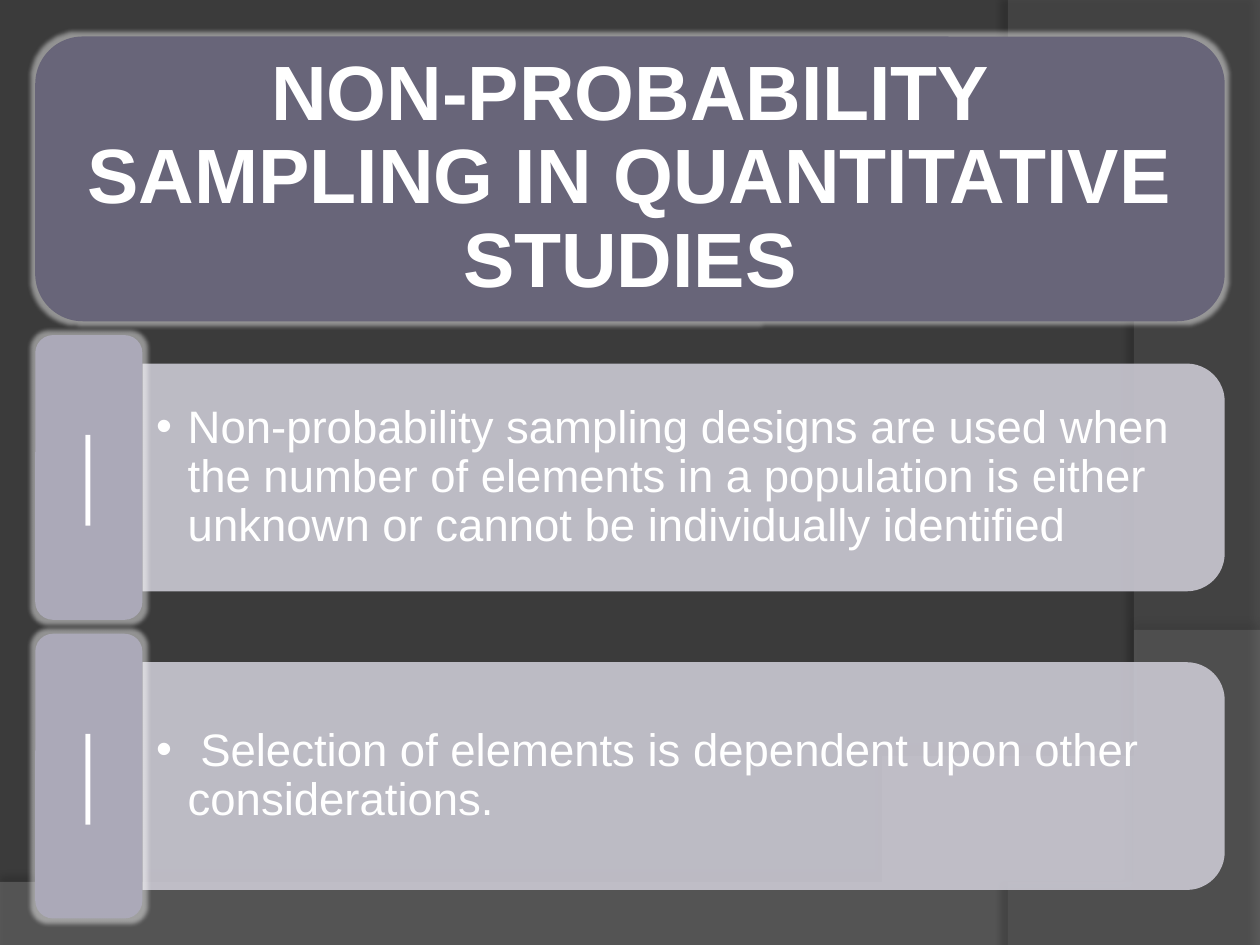
from dataclasses import dataclass

from lxml import etree
from pptx import Presentation
from pptx.dml.color import RGBColor
from pptx.enum.shapes import MSO_SHAPE
from pptx.enum.text import MSO_ANCHOR, MSO_AUTO_SIZE, PP_ALIGN
from pptx.oxml.ns import qn
from pptx.util import Inches, Pt

ROUNDED = MSO_SHAPE.ROUNDED_RECTANGLE
TWO_ROUNDED = MSO_SHAPE.ROUND_2_SAME_RECTANGLE
CENTER, LEFT = PP_ALIGN.CENTER, PP_ALIGN.LEFT
MIDDLE = MSO_ANCHOR.MIDDLE
NO_FIT = MSO_AUTO_SIZE.NONE
TWO_CONTENT_LAYOUT = 3


@dataclass(frozen=True)
class Theme:
    background: str = "3B3B3B"
    lower_wave: str = "7F7F7F"
    side_wave: str = "5E5E5E"
    banner: str = "686579"
    tab: str = "ABA9B8"
    panel: str = "CBC9D3"
    text: str = "FFFFFF"
    glow: str = "FFFFFF"
    shadow: str = "000000"
    font: str = "Arial"
    tab_font: str = "Calibri"
    title_size: int = 44
    body_size: int = 26
    tab_size: int = 50


THEME = Theme()

# Grid: three equal rows, a narrow tab column and a wide panel column
WIDTH, HEIGHT = 10, 7.5
MARGIN, TOP = 0.28, 0.29
ROW_HEIGHT, ROW_STEP = 2.26, 2.37
TAB_WIDTH = 0.85
PANEL_LEFT = MARGIN + TAB_WIDTH
PANEL_WIDTH = WIDTH - MARGIN - PANEL_LEFT
PANEL_HEIGHT = 0.8 * ROW_HEIGHT

POINTS = (
    "Non-probability sampling designs are used when the number of elements "
    "in a population is either unknown or cannot be individually identified",
    " Selection of elements is dependent upon other considerations.",
)


def row_top(row):
    return TOP + row * ROW_STEP


def curve(start, first, second, end, steps=40):
    """Points along a cubic curve, without its start."""
    points = []
    for step in range(1, steps + 1):
        t = step / steps
        weights = ((1 - t) ** 3, 3 * t * (1 - t) ** 2, 3 * t * t * (1 - t), t ** 3)
        points.append(tuple(
            sum(weight * value for weight, value in zip(weights, axis))
            for axis in zip(start, first, second, end)))
    return points


def add_color(parent, color, opacity):
    node = etree.SubElement(parent, qn("a:srgbClr"), val=color)
    etree.SubElement(node, qn("a:alpha"), val=str(opacity * 1000))


def paint(shape, color, opacity=100):
    """Flat fill with no line and no shadow."""
    shape.shadow.inherit = False
    shape.line.fill.background()
    shape.fill.solid()
    shape.fill.fore_color.rgb = RGBColor.from_string(color)
    if opacity < 100:
        node = shape._element.spPr.find(qn("a:solidFill"))[0]
        etree.SubElement(node, qn("a:alpha"), val=str(opacity * 1000))


def add_effect(shape, tag, color, opacity, **attributes):
    effects = shape._element.spPr.find(qn("a:effectLst"))
    effect = etree.SubElement(
        effects, qn(tag), {name: str(value) for name, value in attributes.items()})
    add_color(effect, color, opacity)


def add_wave(page, points, color, opacity, shade, distance, direction):
    builder = page.shapes.build_freeform(*points[0], scale=Inches(1))
    builder.add_line_segments(points[1:], close=True)
    wave = builder.convert_to_shape()
    paint(wave, color, opacity)
    add_effect(wave, "a:outerShdw", THEME.shadow, shade, blurRad=Pt(4),
               dist=Pt(distance), dir=direction * 60000, rotWithShape=0)


def add_card(page, left, top, width, height, color):
    """Rounded card with a soft glow."""
    card = page.shapes.add_shape(
        ROUNDED, Inches(left), Inches(top), Inches(width), Inches(height))
    paint(card, color)
    add_effect(card, "a:glow", THEME.glow, 45, rad=Pt(5))
    return card


def add_panel(page, row):
    """Panel with rounded right corners: a turned shape about its own centre."""
    center_x = PANEL_LEFT + PANEL_WIDTH / 2
    center_y = row_top(row) + ROW_HEIGHT / 2
    panel = page.shapes.add_shape(
        TWO_ROUNDED, Inches(center_x - PANEL_HEIGHT / 2),
        Inches(center_y - PANEL_WIDTH / 2), Inches(PANEL_HEIGHT), Inches(PANEL_WIDTH))
    panel.rotation = 90
    paint(panel, THEME.panel, 90)


def place(holder, left, top, width, height):
    """Position a placeholder in front of everything drawn so far."""
    holder.left, holder.top = Inches(left), Inches(top)
    holder.width, holder.height = Inches(width), Inches(height)
    holder._element.getparent().append(holder._element)


def write(shape, text, size, font=THEME.font, bold=False, align=CENTER,
          inset=(0.18, 0.09), bullet=False):
    frame = shape.text_frame
    frame.word_wrap = True
    frame.auto_size = NO_FIT
    frame.vertical_anchor = MIDDLE
    frame.margin_left = frame.margin_right = Inches(inset[0])
    frame.margin_top = frame.margin_bottom = Inches(inset[1])
    para = frame.paragraphs[0]
    para.alignment = align
    para.line_spacing = 0.9
    para.space_before = Pt(0)
    if bullet:
        properties = para._p.get_or_add_pPr()
        properties.set("marL", str(Inches(0.25)))
        properties.set("indent", str(-Inches(0.25)))
        etree.SubElement(properties, qn("a:buChar"), char="•")
    span = para.add_run()
    span.text = text
    span.font.name = font
    span.font.size = Pt(size)
    span.font.bold = bold
    span.font.color.rgb = RGBColor.from_string(THEME.text)


def add_backdrop(page):
    page.background.fill.solid()
    page.background.fill.fore_color.rgb = RGBColor.from_string(THEME.background)
    lower = [(0, 7.05), (0, HEIGHT), (WIDTH, HEIGHT), (WIDTH, 5.2)]
    lower += curve(lower[-1], (5.59, 7.29), (3.91, 7.19), lower[0])
    add_wave(page, lower, THEME.lower_wave, 45, 35, 3.5, 270)
    side = [(WIDTH, 0.02), (WIDTH, HEIGHT), (8.21, HEIGHT)]
    side += curve(side[-1], (9.35, 6.19), (10.18, 3), (8, 0))
    add_wave(page, side, THEME.side_wave, 40, 45, 4, 180)


def add_banner(page):
    width = WIDTH - 2 * MARGIN
    add_card(page, MARGIN, TOP, width, ROW_HEIGHT, THEME.banner)
    pad = 0.11
    place(page.shapes.title, MARGIN + pad, TOP + pad, width - 2 * pad, ROW_HEIGHT - 2 * pad)
    write(page.shapes.title, "NON-PROBABILITY SAMPLING IN QUANTITATIVE STUDIES",
          THEME.title_size, bold=True)


def add_point(page, row, text):
    add_panel(page, row)
    holder = page.placeholders[row]
    text_height = 1.63
    place(holder, PANEL_LEFT, row_top(row) + (ROW_HEIGHT - text_height) / 2,
          PANEL_WIDTH - 0.08, text_height)
    write(holder, text, THEME.body_size, align=LEFT, inset=(0.11, 0.05), bullet=True)
    tab = add_card(page, MARGIN, row_top(row), TAB_WIDTH, ROW_HEIGHT, THEME.tab)
    write(tab, "│", THEME.tab_size, font=THEME.tab_font, inset=(0.21, 0.1))


def main():
    deck = Presentation()
    deck.slide_width, deck.slide_height = Inches(WIDTH), Inches(HEIGHT)
    page = deck.slides.add_slide(deck.slide_layouts[TWO_CONTENT_LAYOUT])
    add_backdrop(page)
    add_banner(page)
    for row, text in enumerate(POINTS, start=1):
        add_point(page, row, text)
    deck.save("out.pptx")


if __name__ == "__main__":
    main()
